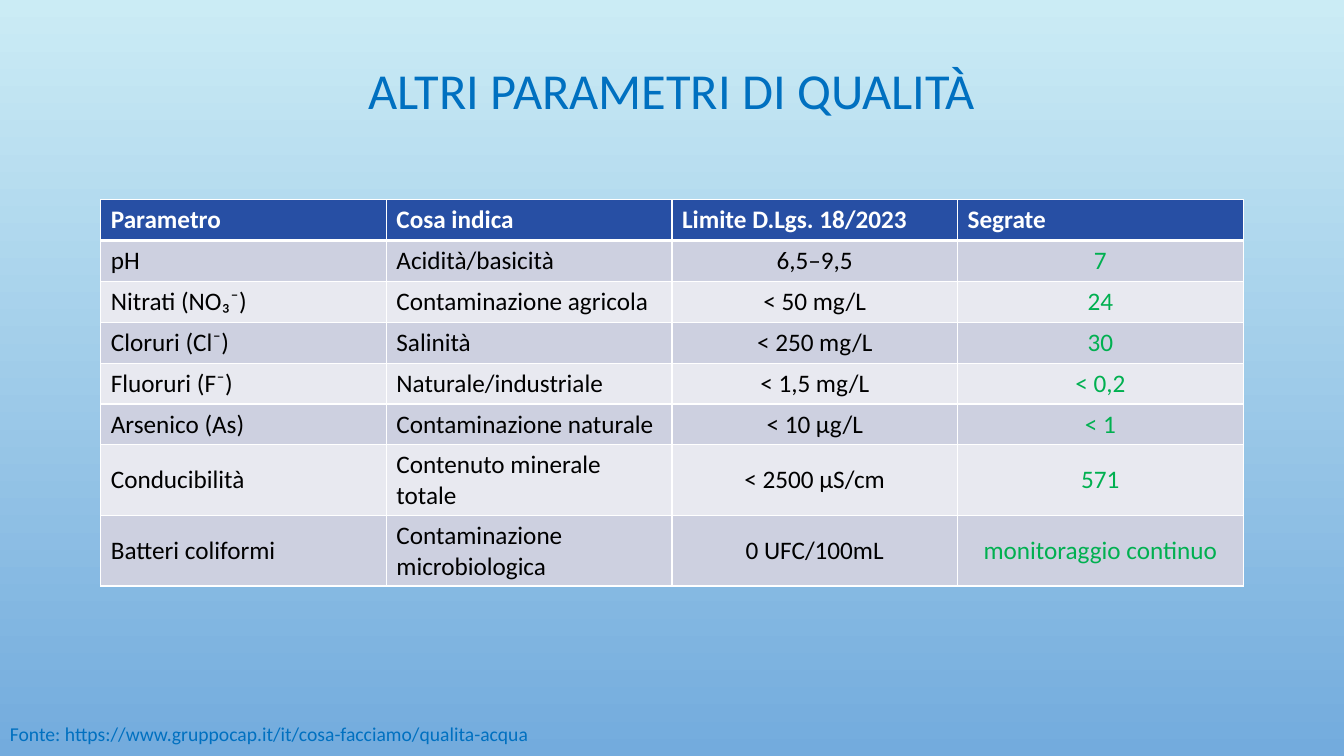
import pptx
import pptx.dml.color
import pptx.enum.text
import pptx.oxml
import pptx.oxml.ns
import pptx.util

Cm = pptx.util.Cm
Pt = pptx.util.Pt
RGBColor = pptx.dml.color.RGBColor
ALIGN = pptx.enum.text.PP_ALIGN
ANCHOR = pptx.enum.text.MSO_ANCHOR

TITLE = "ALTRI PARAMETRI DI QUALITÀ"
SOURCE = "Fonte: https://www.gruppocap.it/it/cosa-facciamo/qualita-acqua"
HEADINGS = ("Parametro", "Cosa indica", "Limite D.Lgs. 18/2023", "Segrate")
PARAMETERS = [
    ("pH", "Acidità/basicità", "6,5–9,5", "7"),
    ("Nitrati (NO₃⁻)", "Contaminazione agricola", "< 50 mg/L", "24"),
    ("Cloruri (Cl⁻)", "Salinità", "< 250 mg/L", "30"),
    ("Fluoruri (F⁻)", "Naturale/industriale", "< 1,5 mg/L", "< 0,2"),
    ("Arsenico (As)", "Contaminazione naturale", "< 10 µg/L", "< 1"),
    ("Conducibilità", "Contenuto minerale totale", "< 2500 µS/cm", "571"),
    ("Batteri coliformi", "Contaminazione microbiologica", "0 UFC/100mL",
     "monitoraggio continuo"),
]

SKY_TOP = RGBColor(0xCB, 0xEC, 0xF5)
SKY_BOTTOM = RGBColor(0x73, 0xAB, 0xDD)
BLUE = RGBColor(0x00, 0x70, 0xC0)
HEADER_BLUE = RGBColor(0x27, 0x4F, 0xA4)
BAND_DARK = RGBColor(0xCD, 0xD0, 0xE0)
BAND_LIGHT = RGBColor(0xE8, 0xE9, 0xF0)
GREEN = RGBColor(0x00, 0xB0, 0x50)
WHITE = RGBColor(0xFF, 0xFF, 0xFF)
BLACK = RGBColor(0x00, 0x00, 0x00)

SLIDE_W, SLIDE_H = Cm(33.87), Cm(19.05)
MARGIN = Cm(2.54)
CONTENT_W = SLIDE_W - 2 * MARGIN
ROW_H = Cm(1.03)


def write(frame, text, size=18, color=BLACK, bold=False, align=ALIGN.LEFT, spacing=1.0):
    paragraph = frame.paragraphs[0]
    paragraph.alignment = align
    paragraph.line_spacing = spacing
    run = paragraph.add_run()
    run.text = text
    run.font.name = "Calibri"
    run.font.size = Pt(size)
    run.font.bold = bold
    run.font.color.rgb = color


def set_borders(cell, **widths):
    """Draw white borders; widths in points are keyed by side: L, R, T, B."""
    properties = cell._tc.get_or_add_tcPr()
    for position, (side, width) in enumerate(widths.items()):
        properties.insert(position, pptx.oxml.parse_xml(
            f'<a:ln{side} {pptx.oxml.ns.nsdecls("a")} w="{Pt(width)}">'
            f'<a:solidFill><a:srgbClr val="{WHITE}"/></a:solidFill></a:ln{side}>'))


def add_parameter_table(slide):
    rows = [HEADINGS] + PARAMETERS
    table = slide.shapes.add_table(len(rows), len(HEADINGS), MARGIN, Cm(5.03),
                                   CONTENT_W, ROW_H * len(rows)).table
    for column in table.columns:
        column.width = CONTENT_W // len(HEADINGS)
    for r, texts in enumerate(rows):
        table.rows[r].height = ROW_H
        header = r == 0
        fill = HEADER_BLUE if header else BAND_DARK if r % 2 else BAND_LIGHT
        for c, text in enumerate(texts):
            cell = table.cell(r, c)
            cell.vertical_anchor = ANCHOR.MIDDLE
            cell.fill.solid()
            cell.fill.fore_color.rgb = fill
            set_borders(cell, L=1, R=1, T=3 if r == 1 else 1, B=3 if header else 1)
            color = WHITE if header else GREEN if c == 3 else BLACK
            align = ALIGN.CENTER if c >= 2 and not header else ALIGN.LEFT
            write(cell.text_frame, text, color=color, bold=header, align=align)


def main():
    deck = pptx.Presentation()
    deck.slide_width, deck.slide_height = SLIDE_W, SLIDE_H
    slide = deck.slides.add_slide(deck.slide_layouts[6])

    sky = slide.background.fill
    sky.gradient()
    sky.gradient_angle = 270
    for stop, color, position in zip(sky.gradient_stops, (SKY_TOP, SKY_BOTTOM), (0, 1)):
        stop.color.rgb = color
        stop.position = position

    title = slide.shapes.add_textbox(MARGIN, Cm(0.13), CONTENT_W, Cm(4.45)).text_frame
    title.word_wrap = True
    title.vertical_anchor = ANCHOR.MIDDLE
    write(title, TITLE, size=36, color=BLUE, align=ALIGN.CENTER, spacing=0.9)

    add_parameter_table(slide)

    source = slide.shapes.add_textbox(0, Cm(18.06), Cm(13.64), Cm(0.86)).text_frame
    source.word_wrap = False
    source.auto_size = pptx.enum.text.MSO_AUTO_SIZE.SHAPE_TO_FIT_TEXT
    write(source, SOURCE, size=14, color=BLUE)

    deck.save("out.pptx")


if __name__ == "__main__":
    main()
